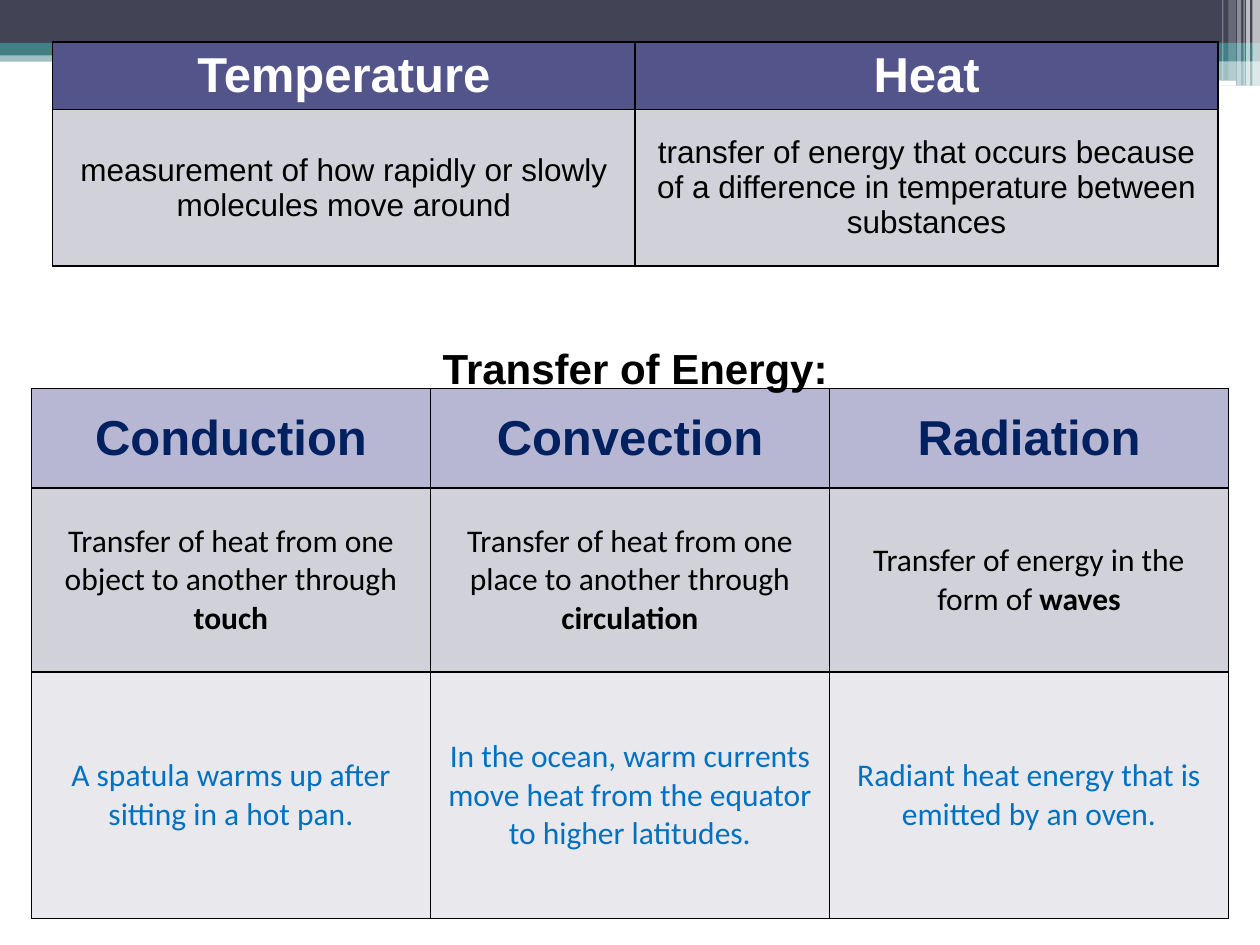
import pptx
import pptx.util
from lxml import etree
from pptx.dml.color import RGBColor
from pptx.enum.shapes import MSO_SHAPE
from pptx.enum.text import MSO_ANCHOR, PP_ALIGN
from pptx.oxml.ns import qn

Pt = pptx.util.Pt

BLACK = RGBColor(0x00, 0x00, 0x00)
WHITE = RGBColor(0xFF, 0xFF, 0xFF)
SLATE = RGBColor(0x42, 0x44, 0x56)
TEAL = RGBColor(0x43, 0x80, 0x86)
INDIGO = RGBColor(0x53, 0x54, 0x8A)
LAVENDER = RGBColor(0xB7, 0xB7, 0xD4)
GREY = RGBColor(0xD1, 0xD1, 0xDA)
PALE = RGBColor(0xE9, 0xE9, 0xED)
NAVY = RGBColor(0x00, 0x20, 0x60)
BLUE = RGBColor(0x00, 0x70, 0xC0)


class SlideBuilder:
    def __init__(self, s):
        self.s = s
        self.border = BLACK
        self.border_width = Pt(1)

    def bar(self, x, y, w, h, color, opacity=100, kind=MSO_SHAPE.RECTANGLE):
        sp = self.s.shapes.add_shape(kind, Pt(x), Pt(y), Pt(w), Pt(h))
        sp.shadow.inherit = False
        sp.line.fill.background()
        sp.fill.solid()
        sp.fill.fore_color.rgb = color
        if opacity < 100:
            clr = sp._element.spPr.find(qn("a:solidFill")).find(qn("a:srgbClr"))
            etree.SubElement(clr, qn("a:alpha"), val=str(opacity * 1000))

    def add_runs(self, tf, runs, font, size, color):
        """Fill a frame with one centred paragraph of (text, bold) runs."""
        p = tf.paragraphs[0]
        p.alignment = PP_ALIGN.CENTER
        for text, is_bold in runs:
            r = p.add_run()
            r.text = text
            r.font.name = font
            r.font.size = Pt(size)
            r.font.bold = is_bold
            r.font.color.rgb = color

    def label(self, x, y, w, h, runs, font, size, color):
        tf = self.s.shapes.add_textbox(Pt(x), Pt(y), Pt(w), Pt(h)).text_frame
        tf.word_wrap = True
        self.add_runs(tf, runs, font, size, color)

    def outline(self, cell):
        tc_pr = cell._tc.get_or_add_tcPr()
        for side in ("a:lnL", "a:lnR", "a:lnT", "a:lnB"):
            ln = etree.SubElement(tc_pr, qn(side), w=str(int(self.border_width)))
            fill = etree.SubElement(ln, qn("a:solidFill"))
            etree.SubElement(fill, qn("a:srgbClr"), val=str(self.border))

    def table(self, x, y, w, rows):
        """Each row is (height, fill, font, size, colour, cells)."""
        n = len(rows[0][-1])
        height = sum(row[0] for row in rows)
        tbl = self.s.shapes.add_table(len(rows), n, Pt(x), Pt(y), Pt(w), Pt(height)).table
        for col in tbl.columns:
            col.width = Pt(w / n)
        for i, (h, fill, font, size, color, cells) in enumerate(rows):
            tbl.rows[i].height = Pt(h)
            for j, runs in enumerate(cells):
                cell = tbl.cell(i, j)
                self.outline(cell)
                cell.fill.solid()
                cell.fill.fore_color.rgb = fill
                cell.vertical_anchor = MSO_ANCHOR.MIDDLE
                self.add_runs(cell.text_frame, runs, font, size, color)


def plain(*texts):
    return [[(text, False)] for text in texts]


def bold(*texts):
    return [[(text, True)] for text in texts]


def draw_banner(b):
    b.bar(0, 28.8, 720, 6.5, TEAL, 50)
    b.bar(0, 0, 720, 24.5, SLATE)
    b.bar(0, 24.5, 720, 7.2, TEAL)
    b.bar(426, 28, 294, 6.8, TEAL)
    b.bar(426, 34.6, 294, 14.4, TEAL, 50)
    b.bar(425.5, 38.9, 241.2, 2.2, WHITE, kind=MSO_SHAPE.ROUNDED_RECTANGLE)
    b.bar(580.3, 46.1, 126, 2.9, WHITE, kind=MSO_SHAPE.ROUNDED_RECTANGLE)
    stripes = [
        (715.7, 4.3, 49, 65), (712.1, 2.2, 49, 65), (710.6, 0.7, 49, 60),
        (707, 2.2, 49, 40), (702, 4.3, 46, 20), (698.4, 0.7, 46, 30),
    ]
    for x, w, h, opacity in stripes:
        b.bar(x, 0, w, h, WHITE, opacity)


def main():
    prs = pptx.Presentation()
    prs.slide_width, prs.slide_height = Pt(720), Pt(540)
    b = SlideBuilder(prs.slides.add_slide(prs.slide_layouts[6]))
    draw_banner(b)

    b.table(18, 222, 684, [
        (57, LAVENDER, "Arial", 28, NAVY, bold("Conduction", "Convection", "Radiation")),
        (105, GREY, "Calibri", 18, BLACK, [
            [("Transfer of heat from one object to another through ", False), ("touch", True)],
            [("Transfer of heat from one place to another through ", False), ("circulation", True)],
            [("Transfer of energy in the form of ", False), ("waves", True)],
        ]),
        (141, PALE, "Calibri", 18, BLUE, plain(
            "A spatula warms up after sitting in a hot pan.",
            "In the ocean, warm currents move heat from the equator to higher latitudes.",
            "Radiant heat energy that is emitted by an oven.",
        )),
    ])
    b.table(30, 24, 666, [
        (38.4, INDIGO, "Arial", 28, WHITE, bold("Temperature", "Heat")),
        (89.7, GREY, "Arial", 18, BLACK, plain(
            "measurement of how rapidly or slowly molecules move around",
            "transfer of energy that occurs because of a difference in temperature "
            "between substances",
        )),
    ])
    b.label(228, 192, 270, 36, [("Transfer of Energy:", True)], "Arial", 24, BLACK)

    prs.save("out.pptx")


if __name__ == "__main__":
    main()
